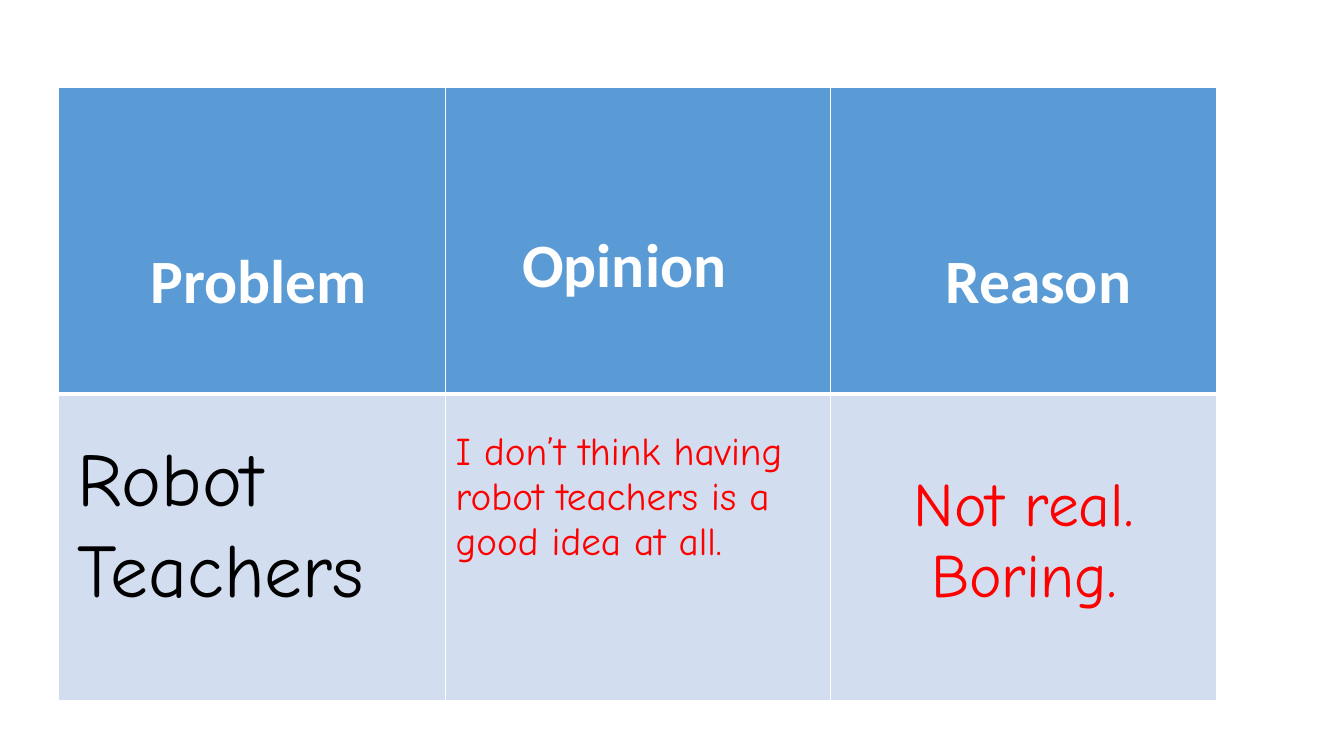
from lxml.etree import SubElement
from pptx import Presentation
from pptx.dml.color import RGBColor as RGB
from pptx.enum.text import MSO_AUTO_SIZE as Fit, PP_ALIGN as Align
from pptx.oxml.ns import qn
from pptx.util import Inches, Pt

HUES = {"head": "5B9BD5", "body": "D2DEEF", "white": "FFFFFF",
        "red": "FF0000", "black": "000000"}


def style(para, font, size, hue, bold=False, align=Align.LEFT):
    para.alignment = align
    para.font.name = font
    para.font.size = Pt(size)
    para.font.bold = bold
    para.font.color.rgb = RGB.from_string(HUES[hue])


def edge(cell, side, width):
    line = SubElement(cell._tc.get_or_add_tcPr(), qn("a:ln" + side), w=str(Pt(width)))
    fill = SubElement(line, qn("a:solidFill"))
    SubElement(fill, qn("a:srgbClr"), val=HUES["white"])


deck = Presentation()
deck.slide_width, deck.slide_height = Inches(13.33), Inches(7.5)
slide = deck.slides.add_slide(deck.slide_layouts[6])

grid = slide.shapes.add_table(2, 3, Inches(0.58), Inches(0.87),
                              Inches(11.49), Inches(6.08)).table
for col, width in zip(grid.columns, (3.84, 3.82, 3.83)):
    col.width = Inches(width)
for row in grid.rows:
    row.height = Inches(3.04)

for r, hue in enumerate(("head", "body")):
    for cell in grid.rows[r].cells:
        for side in "LRTB":
            middle = side == "TB"[1 - r]
            edge(cell, side, 3 if middle else 1)
        cell.fill.solid()
        cell.fill.fore_color.rgb = RGB.from_string(HUES[hue])

texts = [
    (0, 0, "Problem", 44, Align.CENTER, 0.23, 1.56),
    (0, 1, "Opinion", 44, Align.LEFT, 0.76, 1.4),
    (0, 2, "Reason", 44, Align.CENTER, 0.39, 1.56),
    (1, 1, "I don’t think having robot teachers is a good idea at all.",
     28, Align.LEFT, 0.1, 0.36),
    (1, 2, "Not real.\nBoring.", 44, Align.CENTER, 0.1, 0.76),
]
for r, c, text, size, align, left, top in texts:
    cell = grid.cell(r, c)
    cell.margin_left, cell.margin_top = Inches(left), Inches(top)
    cell.text = text
    font, hue = (("Calibri", "white"), ("Comic Neue", "red"))[r]
    for para in cell.text_frame.paragraphs:
        style(para, font, size, hue, r == 0, align)

topic = slide.shapes.add_textbox(Inches(0.67), Inches(4.23), Inches(3.78), Inches(1.92))
frame = topic.text_frame
frame.word_wrap = True
frame.auto_size = Fit.SHAPE_TO_FIT_TEXT
frame.text = "Robot Teachers"
style(frame.paragraphs[0], "Comic Neue", 54, "black")

deck.save("out.pptx")
